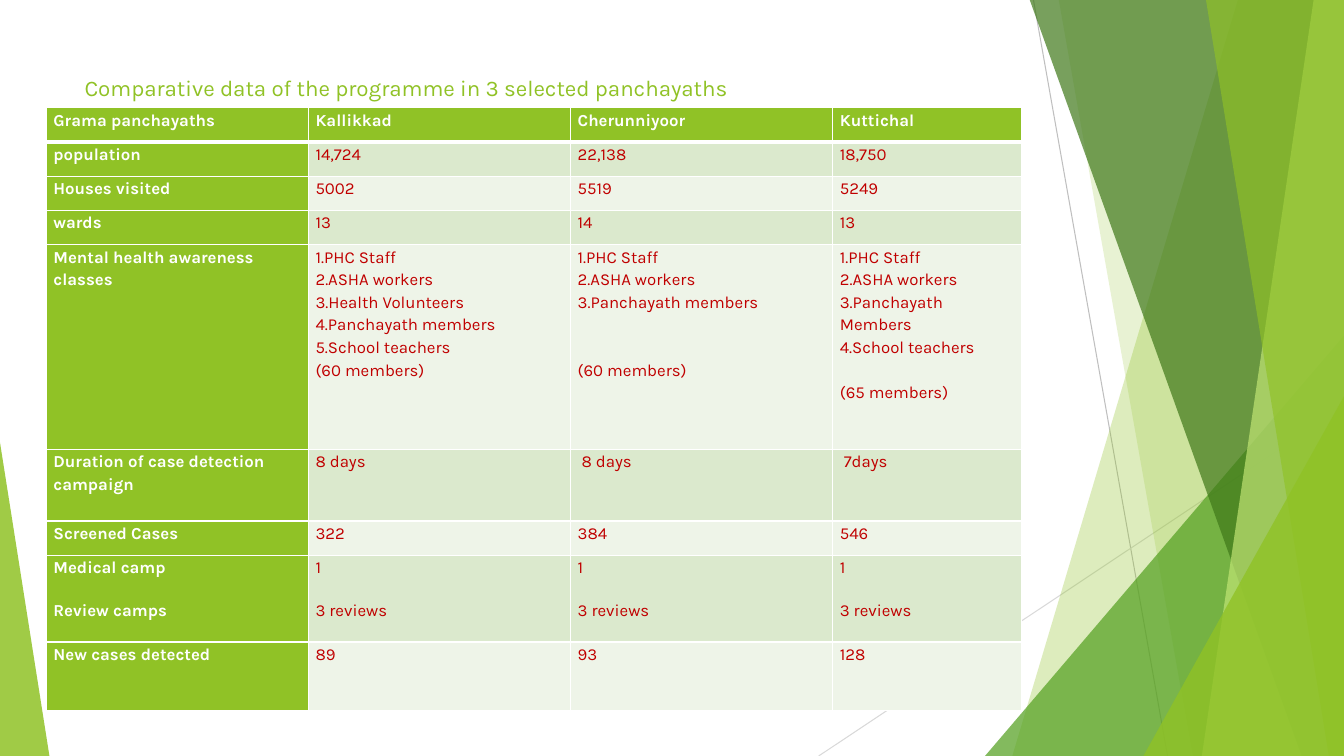
from dataclasses import dataclass

from lxml import etree
from pptx import Presentation
from pptx.dml.color import RGBColor
from pptx.enum.shapes import MSO_CONNECTOR, MSO_SHAPE
from pptx.enum.text import MSO_ANCHOR
from pptx.oxml import parse_xml
from pptx.oxml.ns import nsdecls, qn
from pptx.util import Inches, Pt

TRIANGLE = MSO_SHAPE.ISOSCELES_TRIANGLE
STRAIGHT = MSO_CONNECTOR.STRAIGHT
MIDDLE = MSO_ANCHOR.MIDDLE


@dataclass(frozen=True)
class Theme:
    font: str = "Karla"
    title_size: int = 16
    table_size: int = 12
    green: str = "90C226"
    mid_green: str = "54A021"
    dark_green: str = "3F7819"
    pale_green: str = "C0E474"
    band_dark: str = "DBE9CD"
    band_light: str = "EEF4E8"
    white: str = "FFFFFF"
    red: str = "C00000"
    ray_dark: str = "BFBFBF"
    ray_light: str = "D9D9D9"


theme = Theme()


def style_text(paragraph, size, color, bold=False):
    paragraph.font.name = theme.font
    paragraph.font.size = Pt(size)
    paragraph.font.bold = bold
    paragraph.font.color.rgb = RGBColor.from_string(color)


def paint_facet(facet, color, opacity):
    facet.shadow.inherit = False
    facet.line.fill.background()
    facet.fill.solid()
    facet.fill.fore_color.rgb = RGBColor.from_string(color)
    tint = facet.fill._xPr.find(qn("a:solidFill"))[0]
    etree.SubElement(tint, qn("a:alpha")).set("val", str(opacity * 1000))


prs = Presentation()
prs.slide_width = Inches(13.33)
prs.slide_height = Inches(7.5)
slide = prs.slides.add_slide(prs.slide_layouts[6])
shapes = slide.shapes

rays = [
    (10.25, 0, 11.58, 7.5, theme.ray_dark),
    (13.33, 4.03, 8.12, 7.5, theme.ray_light),
]
for x1, y1, x2, y2, color in rays:
    ray = shapes.add_connector(STRAIGHT, Inches(x1), Inches(y1), Inches(x2), Inches(y2))
    ray.line.color.rgb = RGBColor.from_string(color)
    ray.line.width = Pt(0.75)
    etree.SubElement(ray._element.spPr, qn("a:effectLst"))

# bands: (top x, bottom x); triangles: (left, top, width, apex)
facets = [
    ((12.28, 10.04), theme.green, 30),
    ((10.5, 11.83), theme.green, 20),
    ((9.77, 3.33, 3.56, 1), theme.mid_green, 72),
    ((10.21, 12.91), theme.dark_green, 70),
    ((13.03, 11.92), theme.pale_green, 70),
    ((11.96, 13.18), theme.green, 65),
    ((11.34, 3.93, 1.99, 1), theme.green, 80),
    ((0, 4.39, 0.49, 0), theme.green, 85),
]
for geometry, color, opacity in facets:
    if len(geometry) == 2:
        top_x, bottom_x = geometry
        outline = shapes.build_freeform(Inches(top_x), Inches(-0.01))
        corners = [(13.33, -0.01), (13.33, 7.5), (bottom_x, 7.5)]
        outline.add_line_segments([(Inches(x), Inches(y)) for x, y in corners])
        facet = outline.convert_to_shape()
    else:
        left, top, width, apex = geometry
        facet = shapes.add_shape(
            TRIANGLE, Inches(left), Inches(top), Inches(width), Inches(7.5 - top)
        )
        facet.adjustments[0] = apex
    paint_facet(facet, color, opacity)

title = shapes.add_textbox(Inches(0.74), Inches(0.67), Inches(9.4), Inches(0.4)).text_frame
title.word_wrap = True
title.vertical_anchor = MIDDLE
title.text = "Comparative data of the programme in 3 selected panchayaths"
style_text(title.paragraphs[0], theme.title_size, theme.green)

LINE_GAP = 16.15
CAMP_GAP = 14.8
rows = [
    (0.34, ["Grama panchayaths", "Kallikkad", "Cherunniyoor", "Kuttichal"]),
    (0.34, ["population", "14,724", "22,138", "18,750"]),
    (0.34, ["Houses visited", "5002", "5519", "5249"]),
    (0.34, ["wards", "13", "14", "13"]),
    (2.03, [
        "Mental health awareness classes",
        [("1.PHC Staff", 0), ("2.ASHA workers", 0), ("3.Health Volunteers", 0),
         ("4.Panchayath members", 0), ("5.School teachers", 0), ("(60 members)", 0)],
        [("1.PHC Staff", 0), ("2.ASHA workers", 0), ("3.Panchayath members", 0),
         ("(60 members)", 2 * LINE_GAP)],
        [("1.PHC Staff", 0), ("2.ASHA workers", 0), ("3.Panchayath Members", 0),
         ("4.School teachers", 0), ("(65 members)", LINE_GAP)],
    ]),
    (0.71, ["Duration of case detection campaign", "8 days", " 8 days", " 7days"]),
    (0.34, ["Screened Cases", "322", "384", "546"]),
    (0.86, [[("Medical camp", 0), ("Review camps", CAMP_GAP)]]
     + [[("1", 0), ("3 reviews", CAMP_GAP)]] * 3),
    (0.68, ["New cases detected", "89", "93", "128"]),
]
column_widths = [2.6, 2.6, 2.6, 1.87]

table = shapes.add_table(
    len(rows), len(column_widths), Inches(0.46), Inches(1.07),
    Inches(sum(column_widths)), Inches(sum(height for height, _ in rows)),
).table
table.horz_banding = False
for column, width in zip(table.columns, column_widths):
    column.width = Inches(width)

for r, (height, entries) in enumerate(rows):
    table.rows[r].height = Inches(height)
    for c, entry in enumerate(entries):
        cell = table.cell(r, c)
        is_heading = r == 0 or c == 0
        band = theme.band_dark if r % 2 else theme.band_light
        cell.margin_left = cell.margin_right = Inches(0.07)
        cell.margin_top = cell.margin_bottom = 0
        edges = {"lnL": 1, "lnR": 1, "lnT": 3 if r == 1 else 1, "lnB": 3 if r == 0 else 1}
        for edge, points in edges.items():
            cell._tc.get_or_add_tcPr().append(parse_xml(
                f'<a:{edge} {nsdecls("a")} w="{Pt(points)}"><a:solidFill>'
                f'<a:srgbClr val="{theme.white}"/></a:solidFill></a:{edge}>'
            ))
        cell.fill.solid()
        cell.fill.fore_color.rgb = RGBColor.from_string(theme.green if is_heading else band)

        lines = [(entry, 0)] if isinstance(entry, str) else entry
        for i, (words, gap) in enumerate(lines):
            frame = cell.text_frame
            paragraph = frame.add_paragraph() if i else frame.paragraphs[0]
            paragraph.text = words
            paragraph.line_spacing = 1.15
            paragraph.space_before = Pt(gap)
            style_text(
                paragraph, theme.table_size,
                theme.white if is_heading else theme.red, is_heading,
            )

prs.save("out.pptx")
